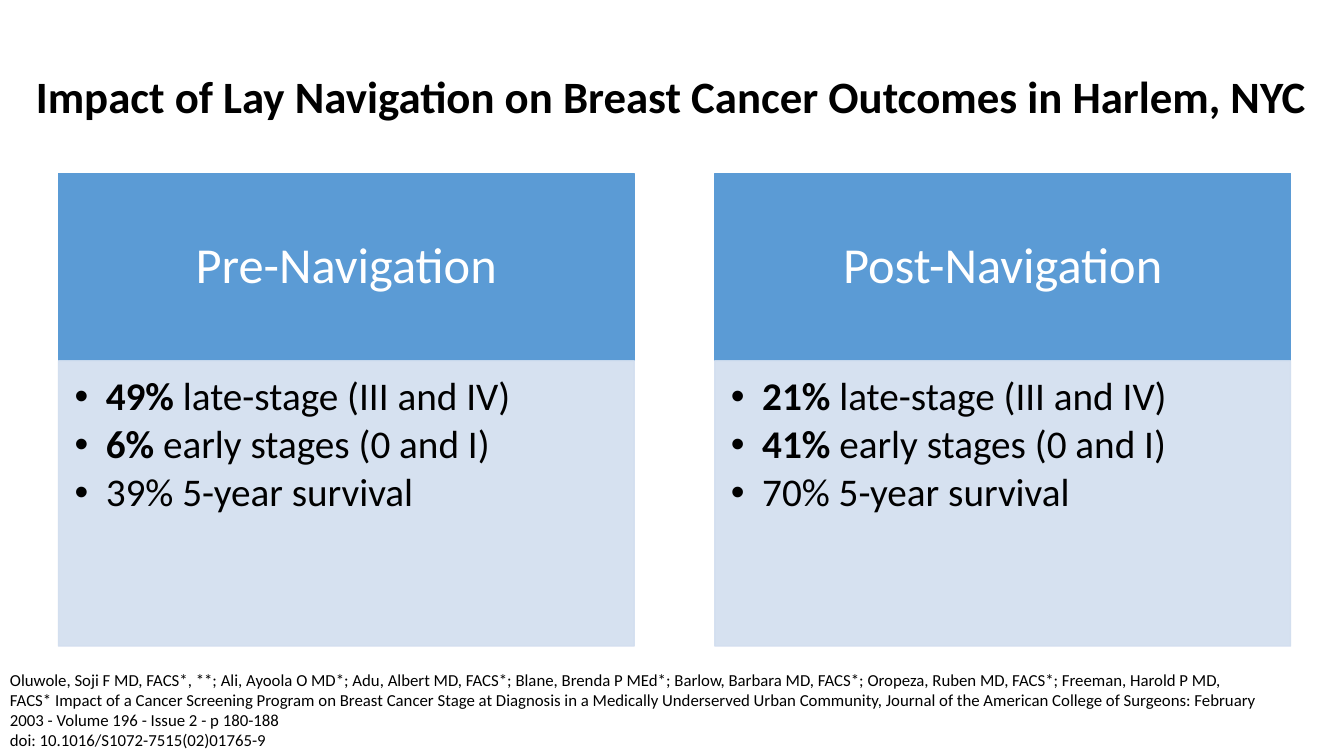
"""Build a slide comparing breast cancer outcomes before and after lay navigation."""
from lxml import etree
from pptx import Presentation
from pptx.dml.color import RGBColor
from pptx.enum import shapes, text
from pptx.oxml import ns
from pptx.util import Inches, Pt

BLACK = RGBColor(0x00, 0x00, 0x00)
WHITE = RGBColor(0xFF, 0xFF, 0xFF)
BLUE = RGBColor(0x5B, 0x9B, 0xD5)
PALE_BLUE = RGBColor(0xD2, 0xDE, 0xEF)


def add_run(paragraph, wording, size, color=BLACK, bold=False):
    run = paragraph.add_run()
    run.text = wording
    formats = {"name": "Calibri", "size": Pt(size), "bold": bold}
    for attribute, value in formats.items():
        setattr(run.font, attribute, value)
    run.font.color.rgb = color


def add_panel(left, top, height, color, margins, anchor):
    panel = slide.shapes.add_shape(
        shapes.MSO_SHAPE.RECTANGLE, Inches(left), Inches(top), Inches(5.71), Inches(height))
    panel.shadow.inherit = False
    panel.fill.solid()
    panel.fill.fore_color.rgb = color
    panel.line.color.rgb = color
    panel.line.width = Pt(1)
    frame = panel.text_frame
    frame.word_wrap = True
    frame.vertical_anchor = anchor
    for side, margin in zip(("left", "top", "right", "bottom"), margins):
        setattr(frame, f"margin_{side}", Inches(margin))
    return panel


prs = Presentation()
prs.slide_width, prs.slide_height = Inches(13.33), Inches(7.5)
slide = prs.slides.add_slide(prs.slide_layouts[5])

title = slide.shapes.title
title_place = {"left": 0.23, "top": 0.26, "width": 12.86, "height": 1.45}
for attribute, value in title_place.items():
    setattr(title, attribute, Inches(value))
title.text_frame.vertical_anchor = text.MSO_ANCHOR.MIDDLE
heading = title.text_frame.paragraphs[0]
heading.alignment = text.PP_ALIGN.CENTER
heading.line_spacing = 0.9
add_run(heading, "Impact of Lay Navigation on Breast Cancer Outcomes in Harlem, NYC", 32, bold=True)

periods = [
    (0.58, "Pre-Navigation", ("49% ", "6% ", "39% ")),
    (7.09, "Post-Navigation", ("21% ", "41% ", "70% ")),
]
measures = [("late-stage (III and IV)", True), ("early stages (0 and I)", True),
            ("5-year survival", False)]

for left, period, rates in periods:
    header = add_panel(left, 1.72, 1.86, BLUE, (0.28, 0.16, 0.28, 0.16), text.MSO_ANCHOR.MIDDLE)
    label = header.text_frame.paragraphs[0]
    label.alignment = text.PP_ALIGN.CENTER
    label.line_spacing = 0.9
    add_run(label, period, 36, WHITE)

    outcomes = add_panel(left, 3.58, 2.83, PALE_BLUE, (0.16, 0.16, 0.22, 0.24),
                         text.MSO_ANCHOR.TOP)
    for tint in outcomes._element.spPr.iter(ns.qn("a:srgbClr")):
        etree.SubElement(tint, ns.qn("a:alpha"), val="90000")
    for index, (rate, (measure, emphasis)) in enumerate(zip(rates, measures)):
        frame = outcomes.text_frame
        outcome = frame.add_paragraph() if index else frame.paragraphs[0]
        properties = outcome._p.get_or_add_pPr()
        properties.set("marL", str(Inches(0.31)))
        properties.set("indent", str(-Inches(0.31)))
        etree.SubElement(properties, ns.qn("a:buFont"), typeface="Arial")
        etree.SubElement(properties, ns.qn("a:buChar"), char="•")
        outcome.level = 1
        outcome.alignment = text.PP_ALIGN.LEFT
        outcome.line_spacing = 0.9
        outcome.space_after = Pt(4)
        add_run(outcome, rate, 28, bold=emphasis)
        add_run(outcome, measure, 28)

citation = slide.shapes.add_textbox(0, Inches(6.59), Inches(12.65), Inches(0.91)).text_frame
citation.word_wrap = True
citation.auto_size = text.MSO_AUTO_SIZE.SHAPE_TO_FIT_TEXT
add_run(
    citation.paragraphs[0],
    "Oluwole, Soji F MD, FACS*, **; Ali, Ayoola O MD*; Adu, Albert MD, FACS*; "
    "Blane, Brenda P MEd*; Barlow, Barbara MD, FACS*; Oropeza, Ruben MD, FACS*; "
    "Freeman, Harold P MD, FACS* Impact of a Cancer Screening Program on Breast Cancer "
    "Stage at Diagnosis in a Medically Underserved Urban Community, Journal of the American "
    "College of Surgeons: February 2003 - Volume 196 - Issue 2 - p 180-188", 12)
add_run(citation.add_paragraph(), "doi: 10.1016/S1072-7515(02)01765-9", 12)

prs.save("out.pptx")
